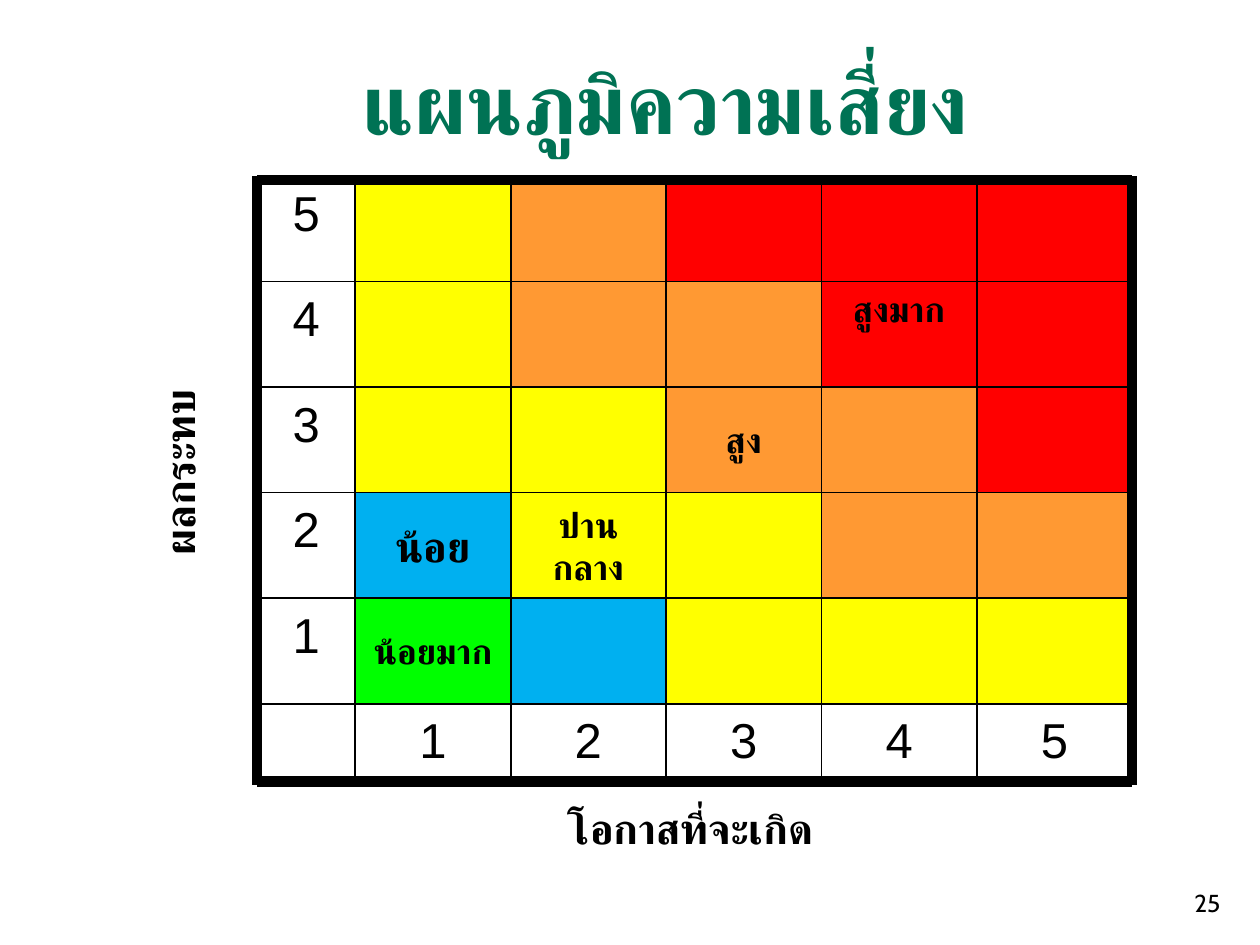
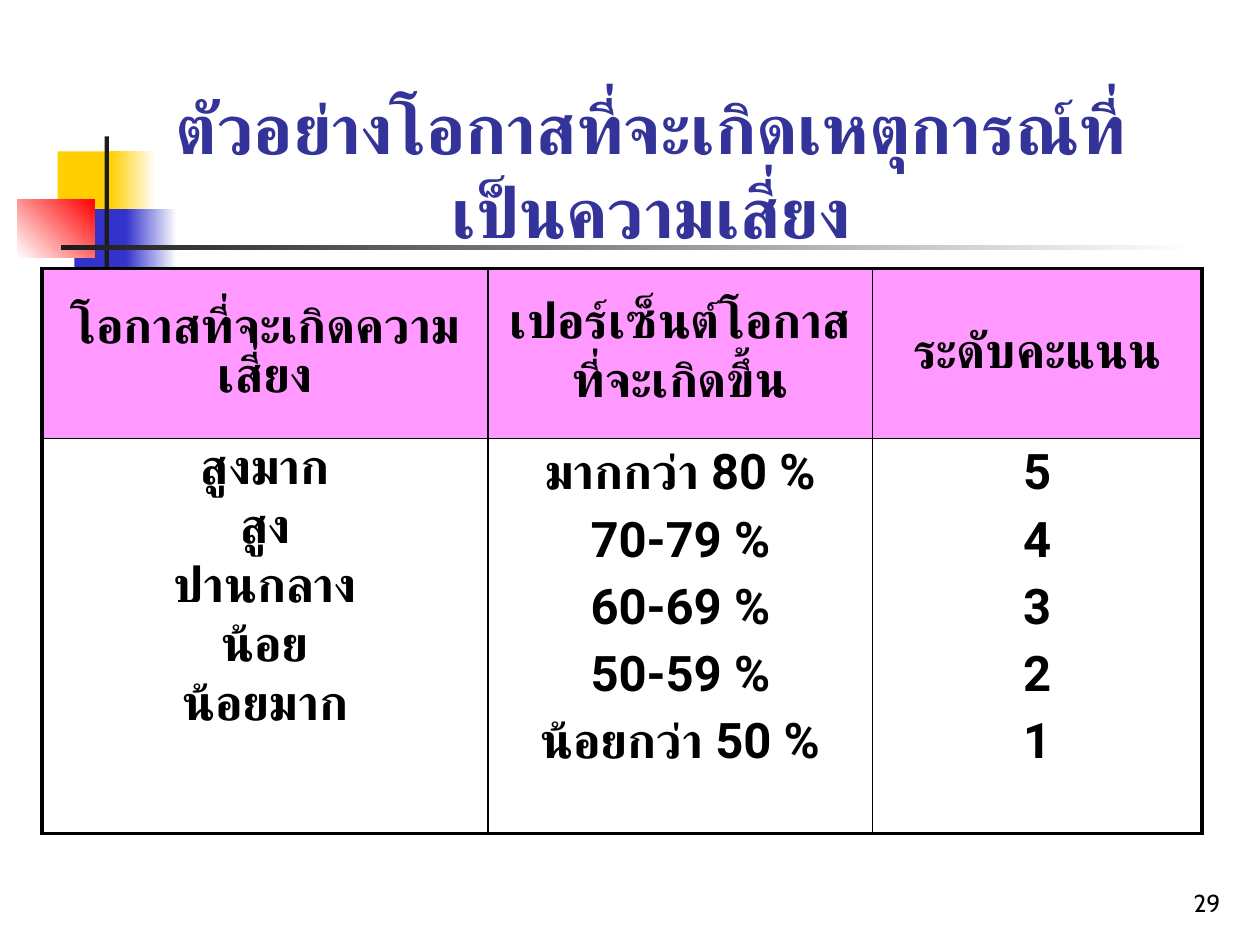
from dataclasses import dataclass
from typing import NamedTuple

from lxml.etree import SubElement
from pptx import Presentation
from pptx.dml.color import RGBColor
from pptx.enum.shapes import MSO_CONNECTOR as Connector, MSO_SHAPE as Shape
from pptx.enum.text import MSO_ANCHOR as Anchor, MSO_AUTO_SIZE as AutoSize, PP_ALIGN as Align
from pptx.oxml.ns import qn
from pptx.util import Pt

BLACK, WHITE = "000000", "FFFFFF"
GREEN_TITLE, BLUE_TITLE = "007254", "333399"
GOLD, BLUE, RED, CHARCOAL = "FFCF01", "3333CC", "FF0000", "1C1C1C"
HEADER_PINK = "FF99FF"
RISK_COLORS = {"G": "00FF00", "B": "00B0F0", "Y": "FFFF00", "O": "FF9933", "R": RED}
TITLE_ONLY = 5


class Box(NamedTuple):
    """Left, top, width and height in points."""
    left: float
    top: float
    width: float
    height: float

    def lengths(self) -> list:
        return [Pt(value) for value in self]


@dataclass(frozen=True)
class Style:
    size: float
    font: str
    color: str = BLACK
    bold: bool = False
    align: Align = Align.CENTER
    before: float = 0
    spacing: float = 1.0


@dataclass(frozen=True)
class Block:
    """A coloured piece of the title ornament, fading when it has an end colour."""
    box: Box
    color: str
    end: str = ""
    angle: float = 0


@dataclass(frozen=True)
class RiskLabel:
    text: str
    size: float = 20
    anchor: Anchor = Anchor.MIDDLE


PAGE_NUMBER = Style(14, "Cabin", align=Align.RIGHT)
AXIS_NUMBER = Style(28, "Arial", before=5.6)
AXIS_TITLE = Style(24, "Times New Roman", bold=True)
TABLE_TEXT = Style(28, "Roboto", bold=True, before=5.6)
TABLE_THAI = Style(28, "Roboto", bold=True, before=5.6, spacing=0.86)

# Risk map: impact runs upwards, likelihood to the right
MAP_LEFT, MAP_TOP = 147, 100.6
LABEL_WIDTH, CELL_WIDTH = 56, 88.8
CELL_HEIGHT, LABEL_HEIGHT = 60.3, 45.4
LEVELS = 5
CELLS_LEFT = MAP_LEFT + LABEL_WIDTH
CELLS_BOTTOM = MAP_TOP + LEVELS * CELL_HEIGHT
MAP_RIGHT = CELLS_LEFT + LEVELS * CELL_WIDTH
MAP_BOTTOM = CELLS_BOTTOM + LABEL_HEIGHT
RISK_ROWS = ["YORRR", "YOORR", "YYOOR", "BYYOO", "GBYYY"]
RISK_LABELS = {
    (1, 3): RiskLabel("สูงมาก", anchor=Anchor.TOP),
    (2, 2): RiskLabel("สูง"),
    (3, 0): RiskLabel("น้อย", 24),
    (3, 1): RiskLabel("ปานกลาง"),
    (4, 0): RiskLabel("น้อยมาก"),
}

ORNAMENT = [
    Block(Box(33, 86.5, 35, 37.5), GOLD),
    Block(Box(63, 86.5, 26, 37.5), GOLD, WHITE),
    Block(Box(42.5, 119.5, 33, 37.5), BLUE),
    Block(Box(72, 119.5, 29, 37.5), BLUE, WHITE),
    Block(Box(10, 113.8, 44, 33.2), WHITE, RED, 45),
    Block(Box(59.8, 78, 2.4, 83), CHARCOAL),
    Block(Box(34.6, 140.2, 648, 2.4), CHARCOAL, WHITE),
]

TABLE_BOX = Box(24, 153.5, 663, 323)
COLUMN_WIDTHS = [255, 219.5, 188.5]
ROW_HEIGHTS = [97, 226]
TABLE_CELLS = [
    ["โอกาสที่จะเกิดความเสี่ยง", "เปอร์เซ็นต์โอกาส\nที่จะเกิดขึ้น", "ระดับคะแนน"],
    ["สูงมาก\nสูง\nปานกลาง\nน้อย\nน้อยมาก",
     "มากกว่า 80 %\n70-79 %\n60-69 %\n50-59 %\nน้อยกว่า 50 %",
     "5\n4\n3\n2\n1"],
]


def rgb(color: str) -> RGBColor:
    return RGBColor.from_string(color)


def write(frame, text: str, style: Style, anchor: Anchor = Anchor.TOP) -> None:
    """Fill a text frame, one paragraph per line, in Latin and Thai fonts alike."""
    frame.text = text
    frame.word_wrap = True
    frame.vertical_anchor = anchor
    format_paragraphs(frame, style)


def format_paragraphs(frame, style: Style) -> None:
    for paragraph in frame.paragraphs:
        paragraph.alignment = style.align
        paragraph.space_before = Pt(style.before)
        paragraph.line_spacing = style.spacing
        font = paragraph.font
        font.size, font.name, font.bold = Pt(style.size), style.font, style.bold
        font.color.rgb = rgb(style.color)
        defaults = paragraph._p.find(".//" + qn("a:defRPr"))
        SubElement(defaults, qn("a:cs"), typeface=style.font)


def add_text(slide, box: Box, text: str, style: Style, anchor: Anchor = Anchor.TOP):
    shape = slide.shapes.add_textbox(*box.lengths())
    write(shape.text_frame, text, style, anchor)
    return shape


def add_block(slide, block: Block):
    shape = slide.shapes.add_shape(Shape.RECTANGLE, *block.box.lengths())
    shape.shadow.inherit = False
    shape.line.fill.background()
    if block.end:
        shape.fill.gradient()
        shape.fill.gradient_angle = block.angle
        for stop, color in zip(shape.fill.gradient_stops, (block.color, block.end)):
            stop.color.rgb = rgb(color)
    else:
        shape.fill.solid()
        shape.fill.fore_color.rgb = rgb(block.color)
    return shape


def add_line(slide, x1: float, y1: float, x2: float, y2: float, width: float) -> None:
    line = slide.shapes.add_connector(Connector.STRAIGHT, Pt(x1), Pt(y1), Pt(x2), Pt(y2))
    line.line.color.rgb = rgb(BLACK)
    line.line.width = Pt(width)
    SubElement(line._element.spPr, qn("a:effectLst"))


def add_slide(presentation, title: str, box: Box, style: Style, number: int):
    """Add a slide with its title and page number."""
    slide = presentation.slides.add_slide(presentation.slide_layouts[TITLE_ONLY])
    shape = slide.shapes.title
    shape.left, shape.top, shape.width, shape.height = box.lengths()
    write(shape.text_frame, title, style, Anchor.MIDDLE)
    shape.text_frame.auto_size = AutoSize.NONE
    add_text(slide, Box(554.5, 492, 150, 36), str(number), PAGE_NUMBER, Anchor.BOTTOM)
    return slide


def draw_risk_cells(slide) -> None:
    for row, colors in enumerate(RISK_ROWS):
        top = MAP_TOP + row * CELL_HEIGHT
        add_text(slide, Box(MAP_LEFT, top, LABEL_WIDTH, CELL_HEIGHT),
                 str(LEVELS - row), AXIS_NUMBER)
        for column, key in enumerate(colors):
            box = Box(CELLS_LEFT + column * CELL_WIDTH, top, CELL_WIDTH, CELL_HEIGHT)
            cell = add_block(slide, Block(box, RISK_COLORS[key]))
            label = RISK_LABELS.get((row, column))
            if label:
                style = Style(label.size, "Arial", bold=True, before=label.size / 5)
                write(cell.text_frame, label.text, style, label.anchor)
    for column in range(LEVELS):
        box = Box(CELLS_LEFT + column * CELL_WIDTH, CELLS_BOTTOM, CELL_WIDTH, LABEL_HEIGHT)
        add_text(slide, box, str(column + 1), AXIS_NUMBER)


def draw_risk_grid(slide) -> None:
    for index in range(LEVELS):
        x = CELLS_LEFT + index * CELL_WIDTH
        y = MAP_TOP + (index + 1) * CELL_HEIGHT
        add_line(slide, x, MAP_TOP, x, MAP_BOTTOM, 1)
        add_line(slide, MAP_LEFT, y, MAP_RIGHT, y, 1)
    for x in (MAP_LEFT, MAP_RIGHT):
        add_line(slide, x, MAP_TOP, x, MAP_BOTTOM + 1, 6)
    for y in (MAP_TOP + 2.4, MAP_BOTTOM - 1):
        add_line(slide, MAP_LEFT, y, MAP_RIGHT, y, 6)


def build_risk_map(presentation) -> None:
    slide = add_slide(presentation, "แผนภูมิความเสี่ยง", Box(193, 21.6, 374.4, 72),
                      Style(48, "Roboto", GREEN_TITLE, True), 25)
    draw_risk_cells(slide)
    draw_risk_grid(slide)
    add_text(slide, Box(150.5, 455, 488, 37.4), "โอกาสที่จะเกิด", AXIS_TITLE)
    impact = add_text(slide, Box(-71.3, 251.3, 348.5, 37.4), "ผลกระทบ", AXIS_TITLE)
    impact.rotation = 270


def set_borders(cell, widths: dict) -> None:
    """Draw black cell borders; widths maps L, R, T and B to points."""
    properties = cell._tc.get_or_add_tcPr()
    for side, width in widths.items():
        line = SubElement(properties, qn(f"a:ln{side}"), w=str(Pt(width)))
        SubElement(SubElement(line, qn("a:solidFill")), qn("a:srgbClr"), val=BLACK)


def draw_likelihood_table(slide) -> None:
    rows, columns = len(ROW_HEIGHTS), len(COLUMN_WIDTHS)
    table = slide.shapes.add_table(rows, columns, *TABLE_BOX.lengths()).table
    table.first_row = table.horz_banding = False
    for column, width in zip(table.columns, COLUMN_WIDTHS):
        column.width = Pt(width)
    for row, height in zip(table.rows, ROW_HEIGHTS):
        row.height = Pt(height)
    for row, texts in enumerate(TABLE_CELLS):
        for column, text in enumerate(texts):
            cell = table.cell(row, column)
            outer = {"L": column == 0, "R": column == columns - 1,
                     "T": row == 0, "B": row == rows - 1}
            set_borders(cell, {side: 2.25 if edge else 1 for side, edge in outer.items()})
            cell.fill.solid()
            cell.fill.fore_color.rgb = rgb(WHITE if row else HEADER_PINK)
            cell.vertical_anchor = Anchor.TOP if row else Anchor.MIDDLE
            cell.text_frame.text = text
            all_thai = column == 0 or row == 0
            format_paragraphs(cell.text_frame, TABLE_THAI if all_thai else TABLE_TEXT)


def build_likelihood(presentation) -> None:
    slide = add_slide(presentation, "ตัวอย่างโอกาสที่จะเกิดเหตุการณ์ที่เป็นความเสี่ยง",
                      Box(66, 60, 612, 72), Style(40, "Roboto", BLUE_TITLE, True), 29)
    for block in ORNAMENT:
        add_block(slide, block)
    draw_likelihood_table(slide)


def main() -> None:
    presentation = Presentation()
    presentation.slide_width, presentation.slide_height = Pt(720), Pt(540)
    build_risk_map(presentation)
    build_likelihood(presentation)
    presentation.save("out.pptx")


if __name__ == "__main__":
    main()
